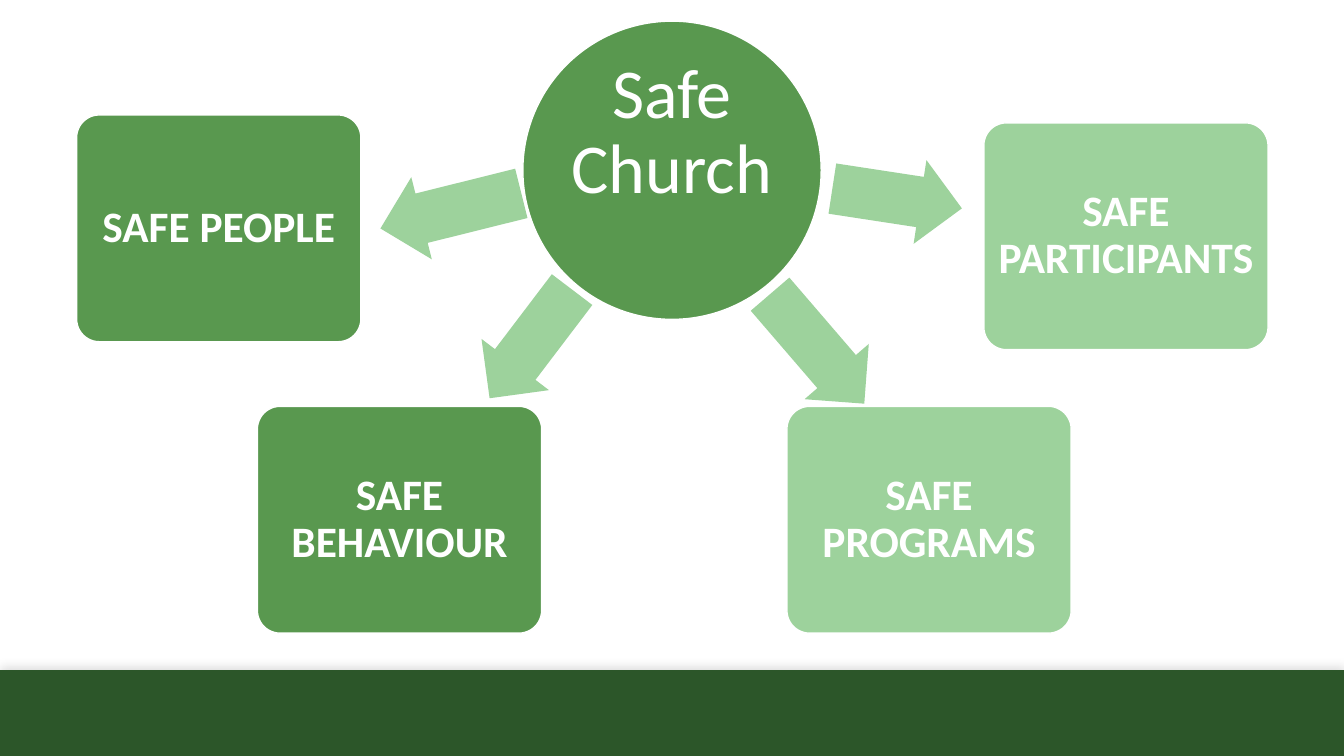
from dataclasses import dataclass

from lxml import etree
from pptx import Presentation
from pptx.dml.color import RGBColor
from pptx.enum.shapes import MSO_SHAPE
from pptx.enum.text import MSO_ANCHOR, MSO_AUTO_SIZE, PP_ALIGN
from pptx.oxml.ns import qn
from pptx.util import Inches, Pt

RECTANGLE, ROUNDED = MSO_SHAPE.RECTANGLE, MSO_SHAPE.ROUNDED_RECTANGLE
OVAL, LEFT_ARROW = MSO_SHAPE.OVAL, MSO_SHAPE.LEFT_ARROW
MIDDLE, CENTER, NO_FIT = MSO_ANCHOR.MIDDLE, PP_ALIGN.CENTER, MSO_AUTO_SIZE.NONE


@dataclass(frozen=True)
class Theme:
    font: str = "Calibri"
    white: str = "FFFFFF"
    footer: str = "2C5629"
    strong: str = "59984F"
    soft: str = "9DD29C"
    hub_size: int = 50
    card_size: int = 31


THEME = Theme()
CARD_WIDTH, CARD_HEIGHT = 21.15, 30
ARROW_HEIGHT = 11.2

# Places and sizes are percentages of the slide's width and height.
# Label, fill, card left and top, arrow centre, arrow length, arrow rotation
BRANCHES = [
    ("SAFE PEOPLE", THEME.strong, (5.7, 15.2), (33.55, 27.9), 10.8, 346),
    ("SAFE BEHAVIOUR", THEME.strong, (19.15, 53.75), (39.5, 45.5), 10.15, 307.2),
    ("SAFE PROGRAMS", THEME.soft, (58.55, 53.75), (60.8, 46.15), 10.75, 229.3),
    ("SAFE PARTICIPANTS", THEME.soft, (73.2, 16.25), (66.75, 26.25), 9.75, 188.7),
]


def apply(target, values):
    for name, value in values.items():
        setattr(target, name, value)


class SlideBuilder:
    def __init__(self, deck, theme):
        self.deck, self.theme = deck, theme
        self.page = deck.slides.add_slide(deck.slide_layouts[5])

    def frame(self, left, top, width, height):
        """Turn percentages of the slide into lengths."""
        across, down = self.deck.slide_width / 100, self.deck.slide_height / 100
        return [round(left * across), round(top * down),
                round(width * across), round(height * down)]

    def shape(self, kind, place, fill, outlined=False, adjustments=()):
        shape = self.page.shapes.add_shape(kind, *self.frame(*place))
        shape.shadow.inherit = False
        shape.fill.solid()
        shape.fill.fore_color.rgb = RGBColor.from_string(fill)
        if outlined:
            shape.line.color.rgb = RGBColor.from_string(self.theme.white)
            shape.line.width = Pt(1)
        else:
            shape.line.fill.background()
        for index, value in enumerate(adjustments):
            shape.adjustments[index] = value
        return shape

    def label(self, box, text, size, bold, inset, bottom):
        frame = box.text_frame
        frame.text = text
        apply(frame, {
            "word_wrap": True, "auto_size": NO_FIT, "vertical_anchor": MIDDLE,
            "margin_left": Inches(inset), "margin_right": Inches(inset),
            "margin_top": Inches(inset), "margin_bottom": Inches(bottom)})
        para = frame.paragraphs[0]
        apply(para, {"alignment": CENTER, "line_spacing": 0.9})
        font = para.runs[0].font
        apply(font, {"name": self.theme.font, "size": Pt(size), "bold": bold})
        font.color.rgb = RGBColor.from_string(self.theme.white)

    def footer_band(self, top):
        band = self.shape(RECTANGLE, (0, top, 100, 100 - top), self.theme.footer)
        effects = band.element.spPr.find(qn("a:effectLst"))
        shadow = etree.SubElement(
            effects, qn("a:outerShdw"), blurRad=str(Pt(7)), dist=str(Pt(3)),
            dir="16200000", algn="b", rotWithShape="0")
        color = etree.SubElement(shadow, qn("a:srgbClr"), val="000000")
        etree.SubElement(color, qn("a:alpha"), val="13000")

    def hub(self, text):
        self.shape(OVAL, (38.9, 2.8, 22.2, 39.45), self.theme.strong, True)
        title = self.page.shapes.title
        place = self.frame(42.1, 8.7, 15.8, 28)
        apply(title, dict(zip(("left", "top", "width", "height"), place)))
        self.label(title, text, self.theme.hub_size, False, 0.03, 0.79)
        # The title has to lie in front of the circle.
        title.element.getparent().append(title.element)

    def arrow(self, center, length, rotation):
        place = (center[0] - length / 2, center[1] - ARROW_HEIGHT / 2,
                 length, ARROW_HEIGHT)
        arrow = self.shape(LEFT_ARROW, place, self.theme.soft, False, (0.6, 0.5))
        arrow.rotation = rotation

    def card(self, text, fill, corner):
        place = (*corner, CARD_WIDTH, CARD_HEIGHT)
        card = self.shape(ROUNDED, place, fill, True, (0.1,))
        self.label(card, text, self.theme.card_size, True, 0.06, 0.06)


def main():
    deck = Presentation()
    apply(deck, {"slide_width": Inches(13.33), "slide_height": Inches(7.5)})
    builder = SlideBuilder(deck, THEME)
    builder.footer_band(88.65)
    builder.hub("Safe Church")
    for label, fill, corner, center, length, rotation in BRANCHES:
        builder.arrow(center, length, rotation)
        builder.card(label, fill, corner)
    deck.save("out.pptx")


if __name__ == "__main__":
    main()
